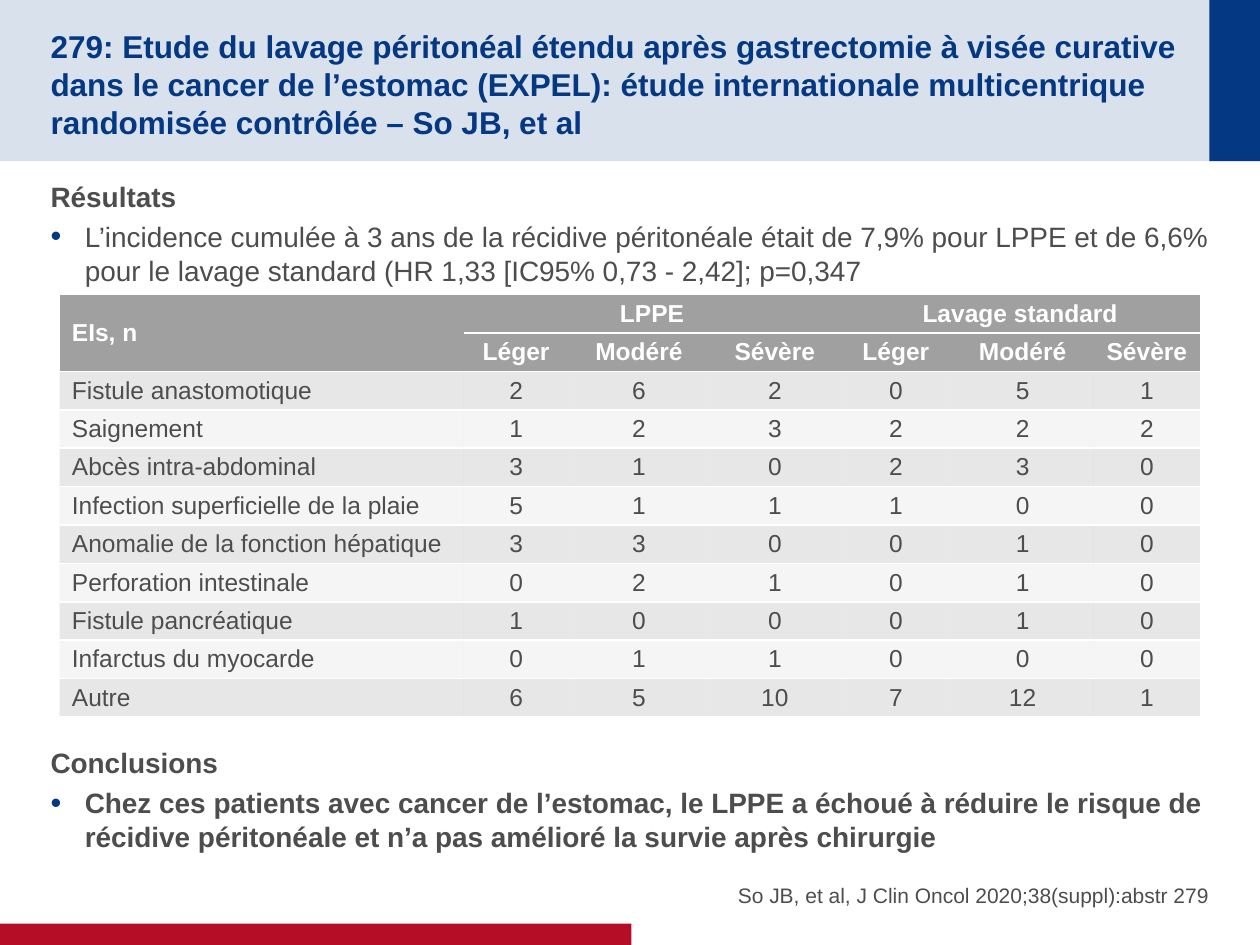
from dataclasses import dataclass

import pptx
import pptx.dml.color
import pptx.dml.fill
import pptx.enum.shapes
import pptx.enum.text
import pptx.oxml
import pptx.oxml.ns
import pptx.slide
import pptx.table
import pptx.text.text
import pptx.util
from lxml import etree
from pptx.util import Cm

NAVY, RED, GREY, TEXT, WHITE = "043882", "B60D27", "A0A0A0", "4D4D4D", "FFFFFF"
ALIGN = pptx.enum.text.PP_ALIGN
ANCHOR = pptx.enum.text.MSO_ANCHOR
NS = pptx.oxml.ns.nsdecls("a")


@dataclass
class Box:
    x: float
    y: float
    w: float
    h: float

    def lengths(self) -> list[pptx.util.Length]:
        return [Cm(v) for v in (self.x, self.y, self.w, self.h)]


@dataclass
class Bar:
    box: Box
    color: str
    opacity: int = 100


@dataclass
class Para:
    text: str
    size: int
    color: str = TEXT
    bold: bool = False
    bullet: bool = False
    align: ALIGN = ALIGN.LEFT
    before: int = 0
    after: int = 0


BARS = [
    Bar(Box(0, 0, 25.4, 3.25), NAVY, 15),
    Bar(Box(24.38, 0, 1.02, 3.25), NAVY),
    Bar(Box(0, 18.62, 12.73, 0.43), RED),
]

TITLE = Para(
    "279: Etude du lavage péritonéal étendu après gastrectomie à visée curative "
    "dans le cancer de l’estomac (EXPEL): étude internationale multicentrique "
    "randomisée contrôlée – So JB, et al", 18, NAVY, bold=True)
BODY = [
    Para("Résultats", 16, bold=True, after=4),
    Para("L’incidence cumulée à 3 ans de la récidive péritonéale était de 7,9% pour "
         "LPPE et de 6,6% pour le lavage standard (HR 1,33 [IC95% 0,73 - 2,42]; p=0,347",
         16, bullet=True, after=4),
    Para("Conclusions", 16, bold=True, before=258, after=4),
    Para("Chez ces patients avec cancer de l’estomac, le LPPE a échoué à réduire le "
         "risque de récidive péritonéale et n’a pas amélioré la survie après chirurgie",
         16, bold=True, bullet=True, after=4),
]
SOURCE = Para("So JB, et al, J Clin Oncol 2020;38(suppl):abstr 279", 12,
              align=ALIGN.RIGHT, after=4)

GRADES = ["Léger", "Modéré", "Sévère"]
HEADER = [["EIs, n", "LPPE", "", "", "Lavage standard", "", ""], ["", *GRADES, *GRADES]]
EVENTS = [
    ("Fistule anastomotique", 2, 6, 2, 0, 5, 1),
    ("Saignement", 1, 2, 3, 2, 2, 2),
    ("Abcès intra-abdominal", 3, 1, 0, 2, 3, 0),
    ("Infection superficielle de la plaie", 5, 1, 1, 1, 0, 0),
    ("Anomalie de la fonction hépatique", 3, 3, 0, 0, 1, 0),
    ("Perforation intestinale", 0, 2, 1, 0, 1, 0),
    ("Fistule pancréatique", 1, 0, 0, 0, 1, 0),
    ("Infarctus du myocarde", 0, 1, 1, 0, 0, 0),
    ("Autre", 6, 5, 10, 7, 12, 1),
]
COLUMNS = [8.15, 2.11, 2.84, 2.64, 2.24, 2.87, 2.14]
ROW_HEIGHT = 0.76


def rgb(color: str) -> pptx.dml.color.RGBColor:
    return pptx.dml.color.RGBColor.from_string(color)


def paint(fill: pptx.dml.fill.FillFormat, parent: etree._Element,
          color: str, opacity: int = 100) -> None:
    """Fill solidly; parent is the XML element that holds the fill."""
    fill.solid()
    fill.fore_color.rgb = rgb(color)
    if opacity < 100:
        clr = parent.find(pptx.oxml.ns.qn("a:solidFill"))[0]
        clr.append(pptx.oxml.parse_xml(f'<a:alpha {NS} val="{opacity * 1000}"/>'))


def draw_bar(s: pptx.slide.Slide, bar: Bar) -> None:
    sp = s.shapes.add_shape(pptx.enum.shapes.MSO_SHAPE.RECTANGLE, *bar.box.lengths())
    sp.shadow.inherit = False
    sp.line.fill.background()
    paint(sp.fill, sp.fill._xPr, bar.color, bar.opacity)


def write(p: pptx.text.text._Paragraph, para: Para) -> None:
    p.text = para.text
    p.alignment = para.align
    p.space_before = pptx.util.Pt(para.before)
    p.space_after = pptx.util.Pt(para.after)
    for r in p.runs:
        r.font.name = "Arial"
        r.font.size = pptx.util.Pt(para.size)
        r.font.bold = para.bold
        r.font.color.rgb = rgb(para.color)
    if para.bullet:
        pPr = p._p.get_or_add_pPr()
        indent = Cm(0.69)
        pPr.set("marL", str(indent))
        pPr.set("indent", str(-indent))
        for xml in (f'<a:buClr {NS}><a:srgbClr val="{NAVY}"/></a:buClr>',
                    f'<a:buSzPct {NS} val="110000"/>',
                    f'<a:buFont {NS} typeface="Arial"/>',
                    f'<a:buChar {NS} char="•"/>'):
            pPr.append(pptx.oxml.parse_xml(xml))


def draw_text(s: pptx.slide.Slide, box: Box, paras: list[Para], anchor: ANCHOR,
              top: float = 0, bottom: float = 0) -> None:
    tf = s.shapes.add_textbox(*box.lengths()).text_frame
    tf.word_wrap = True
    tf.vertical_anchor = anchor
    tf.margin_left = tf.margin_right = 0
    tf.margin_top, tf.margin_bottom = Cm(top), Cm(bottom)
    for i, para in enumerate(paras):
        write(tf.add_paragraph() if i else tf.paragraphs[0], para)


def rule_cell(cell: pptx.table._Cell) -> None:
    """White rules above and below the cell, none at its sides."""
    tcPr = cell._tc.get_or_add_tcPr()
    white = f'<a:solidFill><a:srgbClr val="{WHITE}"/></a:solidFill>'
    for side, line in zip("LRTB", ["<a:noFill/>"] * 2 + [white] * 2):
        tcPr.append(pptx.oxml.parse_xml(f'<a:ln{side} {NS} w="12700">{line}</a:ln{side}>'))


def draw_table(s: pptx.slide.Slide, x: float, y: float) -> None:
    rows = [*HEADER, *EVENTS]
    box = Box(x, y, sum(COLUMNS), ROW_HEIGHT * len(rows))
    table = s.shapes.add_table(len(rows), len(COLUMNS), *box.lengths()).table
    table.first_row = table.horz_banding = False
    for column, width in zip(table.columns, COLUMNS):
        column.width = Cm(width)
    for i, values in enumerate(rows):
        table.rows[i].height = Cm(ROW_HEIGHT)
        head = i < len(HEADER)
        opacity = 100 if head else (25, 10)[i % 2]
        for j, value in enumerate(values):
            cell = table.cell(i, j)
            cell.vertical_anchor = ANCHOR.MIDDLE
            cell.margin_left = cell.margin_right = Cm(0.25)
            cell.margin_top = cell.margin_bottom = Cm(0.09)
            rule_cell(cell)
            paint(cell.fill, cell._tc.tcPr, GREY, opacity)
            write(cell.text_frame.paragraphs[0],
                  Para(str(value), 14, WHITE if head else TEXT, bold=head,
                       align=ALIGN.CENTER if j else ALIGN.LEFT))
    table.cell(0, 0).merge(table.cell(1, 0))
    for j in (1, 4):
        table.cell(0, j).merge(table.cell(0, j + 2))


def main() -> None:
    prs = pptx.Presentation()
    prs.slide_width, prs.slide_height = Cm(25.4), Cm(19.05)
    s = prs.slides.add_slide(prs.slide_layouts[6])
    for bar in BARS:
        draw_bar(s, bar)
    draw_text(s, Box(1.02, 0.51, 22.89, 2.24), [TITLE], ANCHOR.MIDDLE, top=0.13)
    draw_text(s, Box(1.02, 3.48, 23.37, 13.18), BODY, ANCHOR.TOP, top=0.13, bottom=0.13)
    draw_text(s, Box(12.9, 16.94, 11.48, 1.35), [SOURCE], ANCHOR.BOTTOM)
    draw_table(s, 1.2, 5.94)
    prs.save("out.pptx")


if __name__ == "__main__":
    main()
